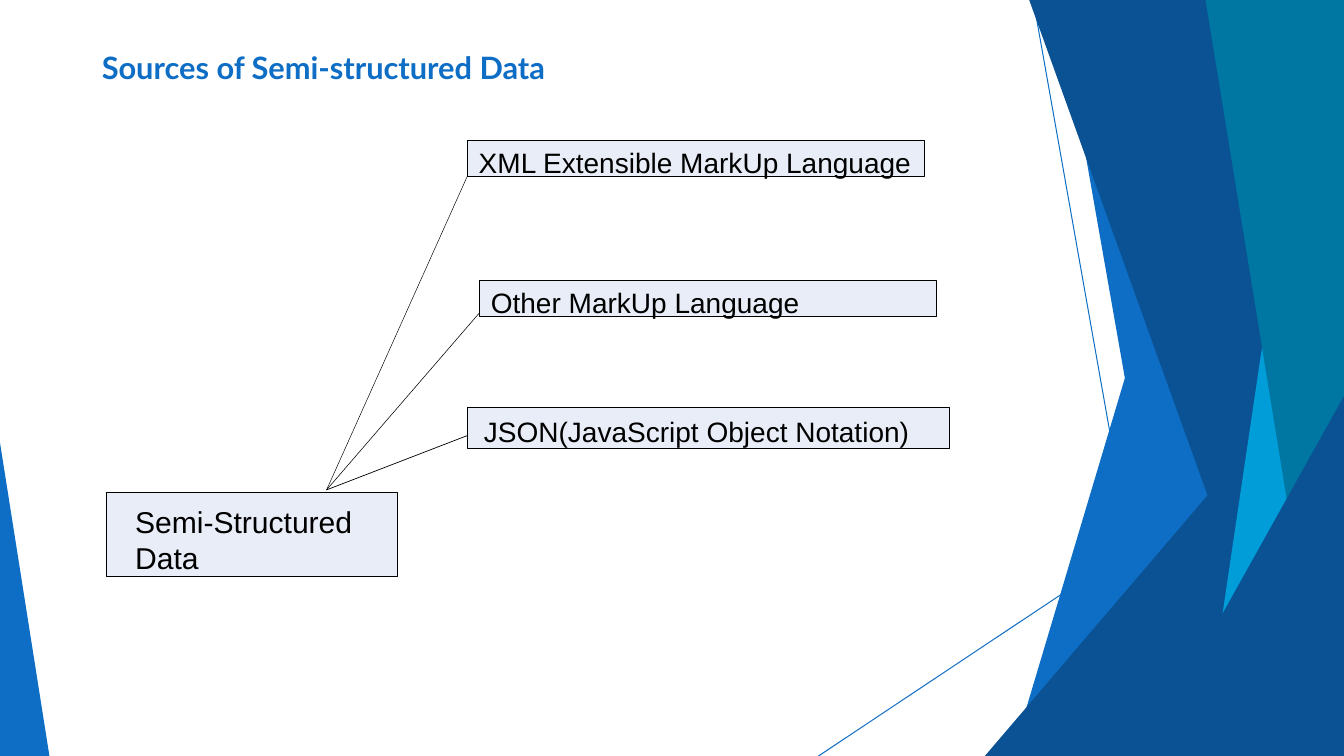
from lxml import etree
from pptx import Presentation
from pptx.dml.color import RGBColor
from pptx.enum.shapes import MSO_CONNECTOR, MSO_SHAPE
from pptx.enum.text import MSO_ANCHOR, PP_ALIGN
from pptx.oxml.ns import qn
from pptx.util import Inches, Pt

WIDTH, HEIGHT = Inches(13.333), Inches(7.5)
TITLE_ONLY = 5
STRAIGHT, RECTANGLE = MSO_CONNECTOR.STRAIGHT, MSO_SHAPE.RECTANGLE
TOP, LEFT = MSO_ANCHOR.TOP, PP_ALIGN.LEFT

BLUE, NAVY, SKY, TEAL = "0E6EC5", "0A5294", "009DD9", "0076A2"
BLACK, PALE = "000000", "E8EDF7"

# All positions are percentages of the slide's width and height
BACKDROP_LINES = [((76.88, 0), (86.85, 100)), ((100, 53.73), (60.9, 100))]
BACKDROP_FACETS = [
    (BLUE, [(100, 0), (92.1, 0), (75.3, 100), (100, 100)]),
    (BLUE, [(100, 0), (78.75, 0), (88.65, 100), (100, 100)]),
    (NAVY, [(100, 44.4), (73.28, 100), (100, 100)]),
    (NAVY, [(100, 0), (76.58, 0), (96.83, 100), (100, 100)]),
    (SKY, [(100, 0), (97.73, 0), (89.4, 100), (100, 100)]),
    (TEAL, [(100, 0), (89.7, 0), (98.85, 100), (100, 100)]),
    (NAVY, [(100, 52.4), (85.05, 100), (100, 100)]),
    (BLUE, [(0, 58.53), (0, 100), (3.68, 100)]),
]
HUB = (24.3, 64.8)
SPOKES = [((34.8, 23.2), 0.33), ((35.7, 41.33), 0.39), ((34.8, 57.6), 0.5)]


def color(code):
    return RGBColor.from_string(code)


def across(share):
    return round(WIDTH * share / 100)


def down(share):
    return round(HEIGHT * share / 100)


def point(spot):
    return across(spot[0]), down(spot[1])


def add_line(page, start, end, code, weight):
    line = page.shapes.add_connector(STRAIGHT, *point(start), *point(end))
    line.line.color.rgb = color(code)
    line.line.width = Pt(weight)
    etree.SubElement(line._element.spPr, qn("a:effectLst"))


def add_facet(page, code, corners):
    first, *others = map(point, corners)
    outline = page.shapes.build_freeform(*first)
    outline.add_line_segments(others, close=True)
    facet = outline.convert_to_shape()
    facet.shadow.inherit = False
    facet.fill.solid()
    facet.fill.fore_color.rgb = color(code)
    facet.line.fill.background()


def write_text(box, text, font, size, code, indent, inset=0):
    frame = box.text_frame
    frame.word_wrap = True
    frame.vertical_anchor = TOP
    frame.margin_left, frame.margin_top = Inches(indent), Inches(inset)
    frame.margin_right = frame.margin_bottom = 0
    para = frame.paragraphs[0]
    para.text = text
    para.alignment = LEFT
    para.font.name = font
    para.font.size = Pt(size)
    para.font.color.rgb = color(code)
    return para


def add_title(page, text):
    title = page.shapes.title
    title.left, title.top = point((3.6, 6.4))
    title.width, title.height = point((92.7, 5.47))
    para = write_text(title, text, "Lato", 22, BLUE, 0.53)
    para.font.bold = True


def add_box(page, text, corner, extent, indent, size=20, inset=0):
    box = page.shapes.add_shape(RECTANGLE, *point(corner), *point(extent))
    box.shadow.inherit = False
    box.fill.solid()
    box.fill.fore_color.rgb = color(PALE)
    box.line.color.rgb = color(BLACK)
    box.line.width = Pt(0.5)
    return write_text(box, text, "Arial", size, BLACK, indent, inset)


def main():
    deck = Presentation()
    deck.slide_width, deck.slide_height = WIDTH, HEIGHT
    page = deck.slides.add_slide(deck.slide_layouts[TITLE_ONLY])

    # Backdrop
    for start, end in BACKDROP_LINES:
        add_line(page, start, end, BLUE, 0.72)
    for code, corners in BACKDROP_FACETS:
        add_facet(page, code, corners)

    add_title(page, "Sources of Semi-structured Data")

    # Lines from the hub to its sources
    for end, weight in SPOKES:
        add_line(page, HUB, end, BLACK, weight)

    # Markup sources
    for text, corner in [
        ("XML Extensible MarkUp Language", (34.8, 18.53)),
        ("Other MarkUp Language", (35.7, 37.07)),
    ]:
        para = add_box(page, text, corner, (33.98, 4.8), 0.11)
        para.line_spacing = Pt(28.1)

    # JSON source and hub
    para = add_box(page, "JSON(JavaScript Object Notation)",
                   (34.8, 53.87), (35.85, 5.47), 0.16, inset=0.07)
    para.space_before = Pt(5.4)
    para = add_box(page, "Semi-Structured Data",
                   (7.88, 65.07), (21.68, 11.2), 0.29, size=21.5, inset=0.11)
    para.space_before = Pt(8)

    deck.save("out.pptx")


if __name__ == "__main__":
    main()
